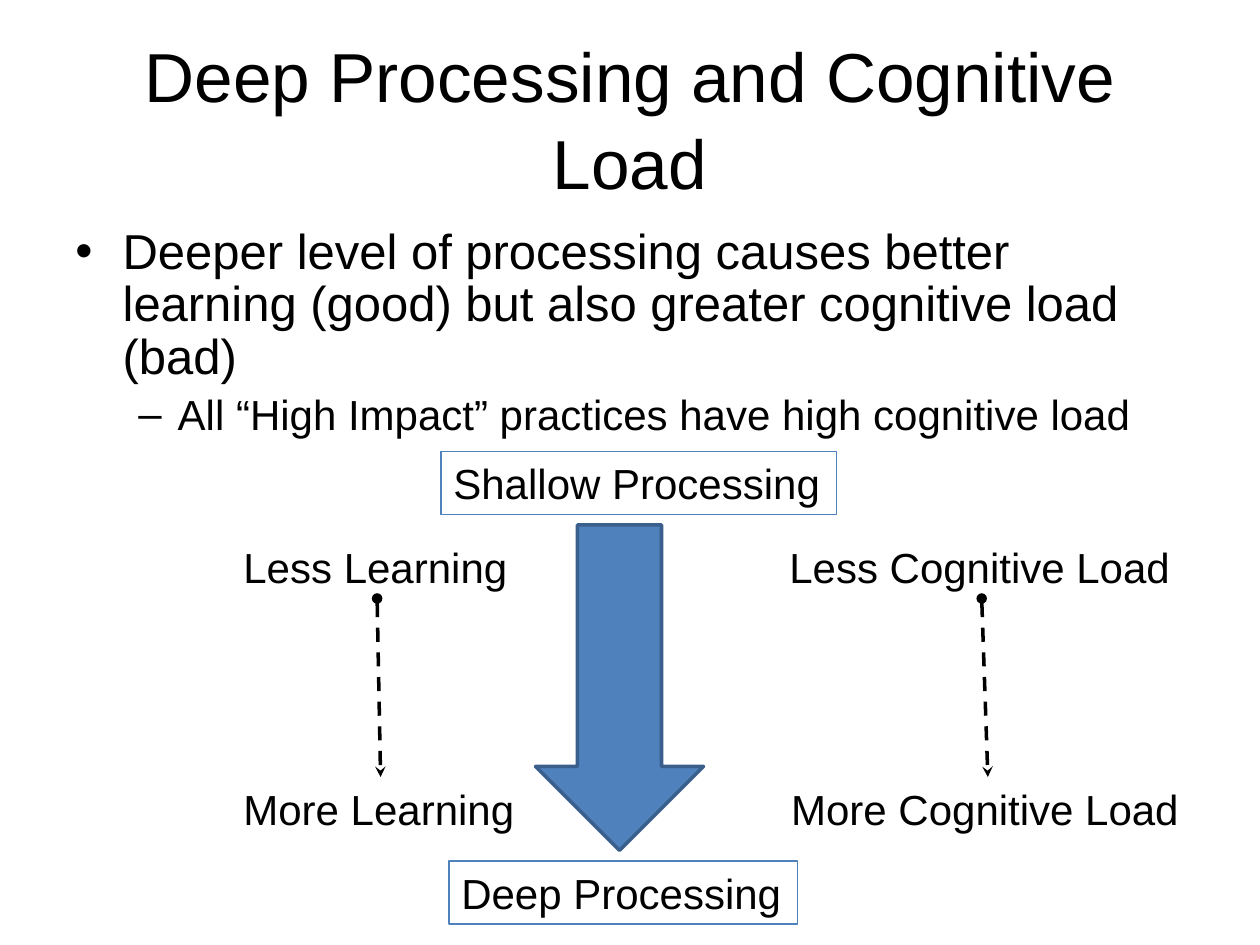
from dataclasses import dataclass

from lxml import etree
from pptx import Presentation
from pptx.dml.color import RGBColor
from pptx.enum import dml, shapes, text
from pptx.oxml import ns
from pptx.util import Pt

COLORS = {"text": "000000", "accent": "4F81BD", "edge": "3A5F8C"}
FONT = "Arial"
LABEL_H = 36


@dataclass
class Label:
    text: str
    left: float
    top: float
    width: float
    boxed: bool = False


@dataclass
class Bullet:
    text: str
    char: str
    size: float
    margin: float
    hang: float
    level: int = 0


LESS_TOP, MORE_TOP = 306, 444
LABELS = [
    Label("Shallow Processing", 252, 258, 226, True),
    Label("Deep Processing", 256.5, 492, 199.2, True),
    Label("More Learning", 132, MORE_TOP, 171.5),
    Label("Less Learning", 132, LESS_TOP, 167),
    Label("Less Cognitive Load", 444, LESS_TOP, 235),
    Label("More Cognitive Load", 445, MORE_TOP, 238.5),
]
BULLETS = [
    Bullet("Deeper level of processing causes better learning (good) but also "
           "greater cognitive load (bad)", "•", 28, 27, 27),
    Bullet("All “High Impact” practices have high cognitive load", "–", 24, 58.5, 22.5, 1),
]
ARROW_ENDS = [(561, 564.5), (215.5, 217.5)]


def rgb(name: str) -> RGBColor:
    return RGBColor.from_string(COLORS[name])


def apply(obj, **values) -> None:
    for name, value in values.items():
        setattr(obj, name, value)


def add_text(p, content: str, size: float) -> None:
    r = p.add_run()
    r.text = content
    apply(r.font, name=FONT, size=Pt(size))
    r.font.color.rgb = rgb("text")


def add_box(s, left: float, top: float, width: float, height: float, wrap: bool = True):
    sp = s.shapes.add_textbox(Pt(left), Pt(top), Pt(width), Pt(height))
    sp.text_frame.word_wrap = wrap
    return sp


def add_title(s, content: str) -> None:
    tf = add_box(s, 36, 21.6, 648, 90).text_frame
    tf.vertical_anchor = text.MSO_ANCHOR.MIDDLE
    p = tf.paragraphs[0]
    apply(p, alignment=text.PP_ALIGN.CENTER, line_spacing=1.04)
    add_text(p, content, 39.6)


def add_bullets(s, bullets: list[Bullet]) -> None:
    tf = add_box(s, 36, 126, 648, 138).text_frame
    for i, b in enumerate(bullets):
        p = tf.add_paragraph() if i else tf.paragraphs[0]
        apply(p, level=b.level, line_spacing=0.9, space_before=Pt(b.size * 0.2))
        add_text(p, b.text, b.size)
        pPr = p._p.get_or_add_pPr()
        pPr.set("marL", str(Pt(b.margin)))
        pPr.set("indent", str(-Pt(b.hang)))
        etree.SubElement(pPr, ns.qn("a:buFont")).set("typeface", FONT)
        etree.SubElement(pPr, ns.qn("a:buChar")).set("char", b.char)


def add_label(s, label: Label) -> None:
    sp = add_box(s, label.left, label.top, label.width, LABEL_H, wrap=label.boxed)
    add_text(sp.text_frame.paragraphs[0], label.text, 24)
    if label.boxed:
        sp.line.width = Pt(0.75)
        sp.line.color.rgb = rgb("accent")


def add_down_arrow(s) -> None:
    sp = s.shapes.add_shape(shapes.MSO_SHAPE.DOWN_ARROW, Pt(306), Pt(300), Pt(96), Pt(186))
    sp.shadow.inherit = False
    sp.fill.solid()
    sp.fill.fore_color.rgb = rgb("accent")
    sp.line.color.rgb = rgb("edge")
    sp.line.width = Pt(2)


def add_dashed_arrow(s, x1: float, x2: float) -> None:
    cx = s.shapes.add_connector(shapes.MSO_CONNECTOR.STRAIGHT,
                                Pt(x1), Pt(LESS_TOP + LABEL_H), Pt(x2), Pt(MORE_TOP))
    cx.line.color.rgb = rgb("text")
    apply(cx.line, width=Pt(2), dash_style=dml.MSO_LINE.DASH)
    ln = cx.line._get_or_add_ln()
    for tag, kind in (("a:headEnd", "oval"), ("a:tailEnd", "stealth")):
        etree.SubElement(ln, ns.qn(tag)).set("type", kind)
    etree.SubElement(cx._element.spPr, ns.qn("a:effectLst"))


def main() -> None:
    prs = Presentation()
    apply(prs, slide_width=Pt(720), slide_height=Pt(540))
    s = prs.slides.add_slide(prs.slide_layouts[6])
    add_title(s, "Deep Processing and Cognitive Load")
    add_bullets(s, BULLETS)
    add_down_arrow(s)
    for label in LABELS:
        add_label(s, label)
    for x1, x2 in ARROW_ENDS:
        add_dashed_arrow(s, x1, x2)
    prs.save("out.pptx")


if __name__ == "__main__":
    main()
